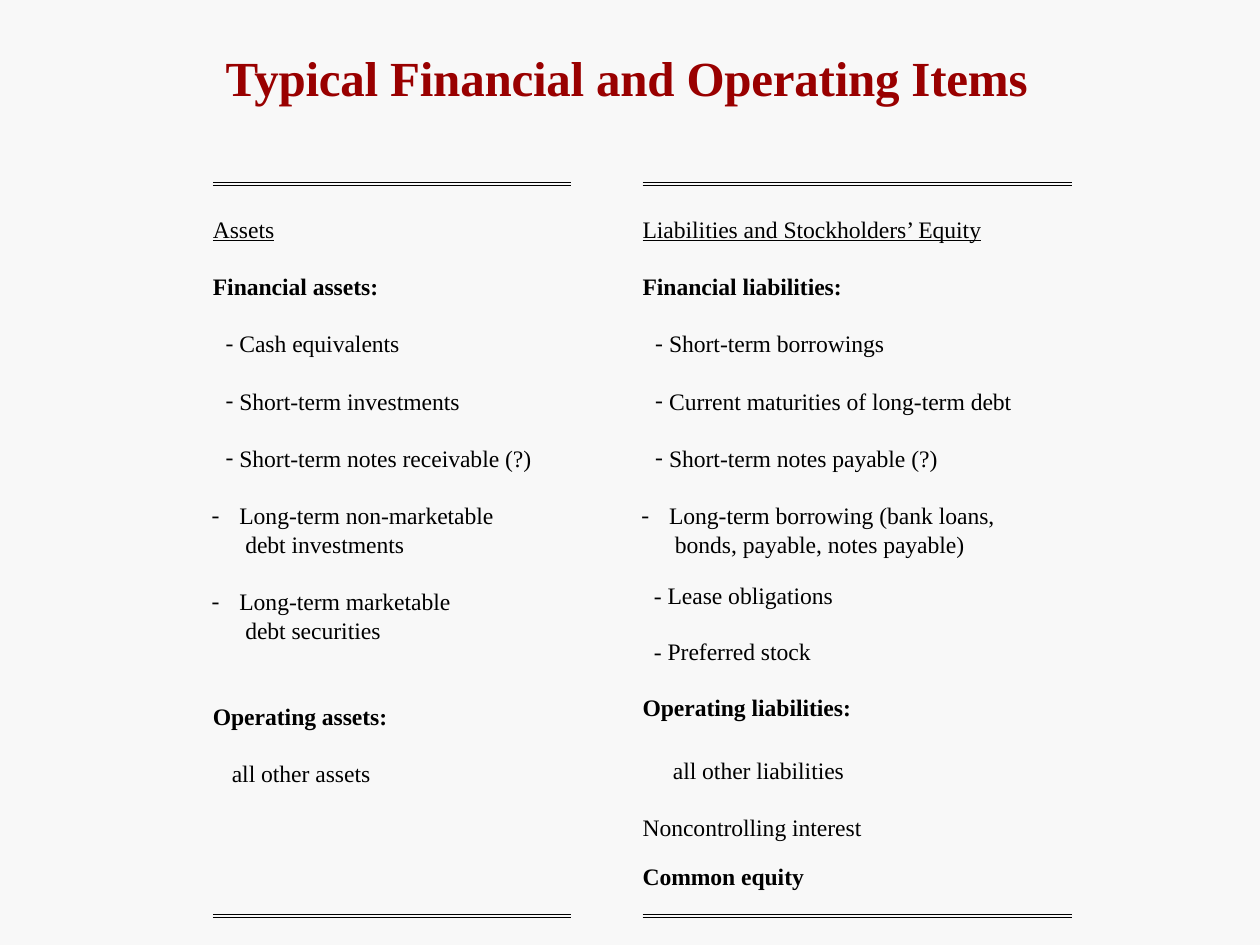
from dataclasses import dataclass

from lxml.etree import SubElement
from pptx import Presentation
from pptx.dml.color import RGBColor as Rgb
from pptx.enum.shapes import MSO_CONNECTOR as Conn
from pptx.oxml.ns import qn
from pptx.util import Inches, Pt


@dataclass(frozen=True)
class Theme:
    font: str = "Times New Roman"
    back: Rgb = Rgb(0xF8, 0xF8, 0xF8)
    ink: Rgb = Rgb(0, 0, 0)
    red: Rgb = Rgb(0x99, 0, 0)
    title: float = 28
    body: float = 13.5
    pitch: float = 16.4
    rule: float = 0.27


T = Theme()

# Paragraph kinds: left margin and first-line indent in inches, then font
KINDS = {
    "head": dict(left=0.01, under=True),
    "group": dict(left=0.01, bold=True),
    "plain": dict(left=0.01),
    "item": dict(left=0.22, first=-0.11, bullet="-"),
    "long": dict(left=0.22, first=-0.22, bullet="-"),
    "asset": dict(left=0.16),
    "debt": dict(left=0.25),
}

ASSETS = [
    ("head", "Assets"),
    ("group", "Financial assets:"),
    ("item", "Cash equivalents"),
    ("item", "Short-term investments"),
    ("item", "Short-term notes receivable (?)"),
    ("long", "Long-term non-marketable\v debt investments"),
    ("long", "Long-term marketable\v debt securities"),
    ("group", "Operating assets:", 2 * T.pitch),
    ("asset", "all other assets"),
]
DEBTS = [
    ("head", "Liabilities and Stockholders’ Equity"),
    ("group", "Financial liabilities:"),
    ("item", "Short-term borrowings"),
    ("item", "Current maturities of long-term debt"),
    ("item", "Short-term notes payable (?)"),
    ("long", "Long-term borrowing (bank loans,\v bonds, payable, notes payable)"),
]
OTHERS = [
    ("group", "Operating liabilities:"),
    ("debt", "all other liabilities", 19.3),
    ("plain", "Noncontrolling interest"),
]


def add_frame(slide, box, inset=0.02):
    frame = slide.shapes.add_textbox(*map(Inches, box)).text_frame
    frame.word_wrap = True
    frame.margin_left = frame.margin_right = frame.margin_bottom = 0
    frame.margin_top = Inches(inset)
    return frame


def write(para, text, size=T.body, color=T.ink, bold=False, under=False,
          left=0.01, first=0, gap=1.1, pitch=None, bullet=None, track=0):
    """Fill one paragraph; a vertical tab in the text breaks the line."""
    para.text = text
    para.space_before = Pt(gap)
    if pitch:
        para.line_spacing = Pt(pitch)
    for run in para.runs:
        font = run.font
        font.name, font.size, font.bold = T.font, Pt(size), bold
        font.underline = under
        font.color.rgb = color
        if track:
            font._element.set("spc", str(track))
    props = para._p.get_or_add_pPr()
    props.set("marL", str(Inches(left)))
    props.set("indent", str(Inches(first)))
    if bullet:
        SubElement(props, qn("a:buFont"), typeface=T.font)
        SubElement(props, qn("a:buChar"), char=bullet)


def add_list(slide, box, rows):
    frame = add_frame(slide, box)
    for i, (kind, text, *gap) in enumerate(rows):
        para = frame.add_paragraph() if i else frame.paragraphs[0]
        space = gap[0] if gap else T.pitch
        write(para, text, gap=space if i else 1.1, pitch=T.pitch,
              **KINDS[kind])


def add_rules(slide, left, width):
    """Draw a double rule above and below a column."""
    for top in (1.45, 7.26):
        for y in (top, top + 0.02):
            line = slide.shapes.add_connector(
                Conn.STRAIGHT, Inches(left), Inches(y),
                Inches(left + width), Inches(y))
            line.line.color.rgb = T.ink
            line.line.width = Pt(T.rule)
            SubElement(line._element.spPr, qn("a:effectLst"))


def add_title(slide, box):
    write(add_frame(slide, box, 0.01).paragraphs[0],
          "Typical Financial and Operating Items",
          size=T.title, color=T.red, bold=True, gap=0.9, track=-10)


def add_left(slide, left, top):
    add_rules(slide, left + 0.01, 2.84)
    add_list(slide, (left, top, 2.58, 4.5), ASSETS)


def add_right(slide, left, top):
    add_rules(slide, left + 0.01, 3.41)
    add_list(slide, (left, top, 2.99, 2.71), DEBTS)
    dash = left + 0.09
    add_list(slide, (dash, top + 2.91, 1.46, 0.26),
             [("plain", "- Lease obligations")])
    add_list(slide, (dash, top + 3.35, 1.29, 0.26),
             [("plain", "- Preferred stock")])
    add_list(slide, (left, top + 3.8, 1.79, 1.15), OTHERS)
    add_list(slide, (left, top + 5.14, 1.32, 0.26),
             [("group", "Common equity")])


def main():
    deck = Presentation()
    deck.slide_width, deck.slide_height = Inches(10), Inches(7.5)
    slide = deck.slides.add_slide(deck.slide_layouts[6])
    fill = slide.background.fill
    fill.solid()
    fill.fore_color.rgb = T.back
    add_title(slide, (1.78, 0.37, 6.49, 0.49))
    add_left(slide, 1.68, 1.68)
    add_right(slide, 5.09, 1.68)
    deck.save("out.pptx")


if __name__ == "__main__":
    main()
